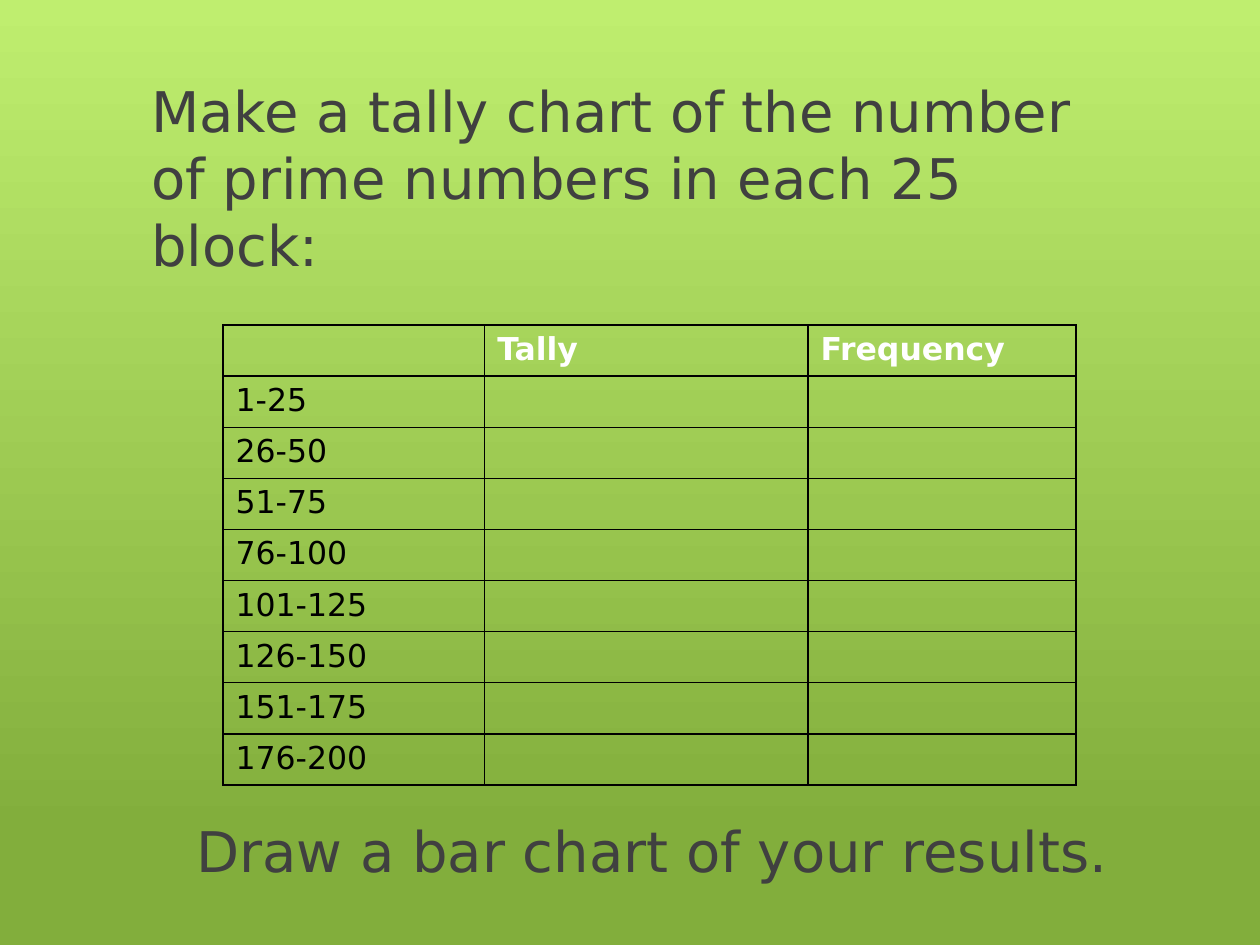
from lxml.etree import SubElement
from pptx import Presentation
from pptx.dml.color import RGBColor
from pptx.enum.text import MSO_ANCHOR, PP_ALIGN
from pptx.oxml.ns import qn
from pptx.util import Inches, Pt

WIDE, HIGH = Inches(10), Inches(7.5)
LIME = RGBColor(0xBF, 0xEE, 0x6F)
MOSS = RGBColor(0x82, 0xAE, 0x3C)
GREY = RGBColor(0x40, 0x40, 0x40)
WHITE = RGBColor(255, 255, 255)
BLACK = RGBColor(0, 0, 0)
FONT = "DejaVu Sans"
HEADS = ["", "Tally", "Frequency"]
BLOCK, COUNT = 25, 8
COLS = [2.08, 2.57, 2.13]


def area(left, top, width, height):
    return [int(WIDE * left), int(HIGH * top), int(WIDE * width), int(HIGH * height)]


def write(frame, text, size=18, color=BLACK, bold=False):
    para = frame.paragraphs[0]
    para.alignment = PP_ALIGN.LEFT
    run = para.add_run()
    run.text = text
    font = run.font
    font.name, font.size, font.bold = FONT, Pt(size), bold
    font.color.rgb = color


def paint(slide):
    fill = slide.background.fill
    fill.gradient()
    fill.gradient_angle = 270
    for stop, color, place in zip(fill.gradient_stops, (LIME, MOSS), (0, 0.88)):
        stop.color.rgb = color
        stop.position = place


def add_title(slide, box):
    title = slide.shapes.title
    title.left, title.top, title.width, title.height = box
    frame = title.text_frame
    frame.word_wrap = True
    frame.vertical_anchor = MSO_ANCHOR.MIDDLE
    frame.margin_bottom = int(box[3] * 0.3)
    write(frame, "Make a tally chart of the number of prime numbers in each 25 block:",
          size=32, color=GREY)


def edge(cell):
    props = cell._tc.get_or_add_tcPr()
    for n, side in enumerate(("lnL", "lnR", "lnT", "lnB")):
        line = SubElement(props, qn("a:" + side), w=str(Pt(1)))
        fill = SubElement(line, qn("a:solidFill"))
        SubElement(fill, qn("a:srgbClr"), val=str(BLACK))
        props.remove(line)
        props.insert(n, line)


def add_tally(slide, box):
    spans = [f"{n * BLOCK + 1}-{(n + 1) * BLOCK}" for n in range(COUNT)]
    rows = [HEADS] + [[span, "", ""] for span in spans]
    table = slide.shapes.add_table(len(rows), len(COLS), *box).table
    table.first_row = table.horz_banding = False
    for col, share in zip(table.columns, COLS):
        col.width = int(box[2] * share / sum(COLS))
    for r, row in enumerate(rows):
        table.rows[r].height = box[3] // len(rows)
        for c, text in enumerate(row):
            cell = table.cell(r, c)
            cell.fill.background()
            edge(cell)
            if text:
                write(cell.text_frame, text, color=BLACK if r else WHITE, bold=r == 0)


def add_task(slide, box):
    frame = slide.shapes.add_textbox(*box).text_frame
    frame.word_wrap = True
    write(frame, "Draw a bar chart of your results.", size=32, color=GREY)


def main():
    deck = Presentation()
    deck.slide_width, deck.slide_height = WIDE, HIGH
    slide = deck.slides.add_slide(deck.slide_layouts[5])
    paint(slide)
    add_title(slide, area(0.11, 0.1, 0.78, 0.24))
    add_tally(slide, area(0.177, 0.344, 0.677, 0.487))
    add_task(slide, area(0.146, 0.857, 0.803, 0.125))
    deck.save("out.pptx")


if __name__ == "__main__":
    main()
